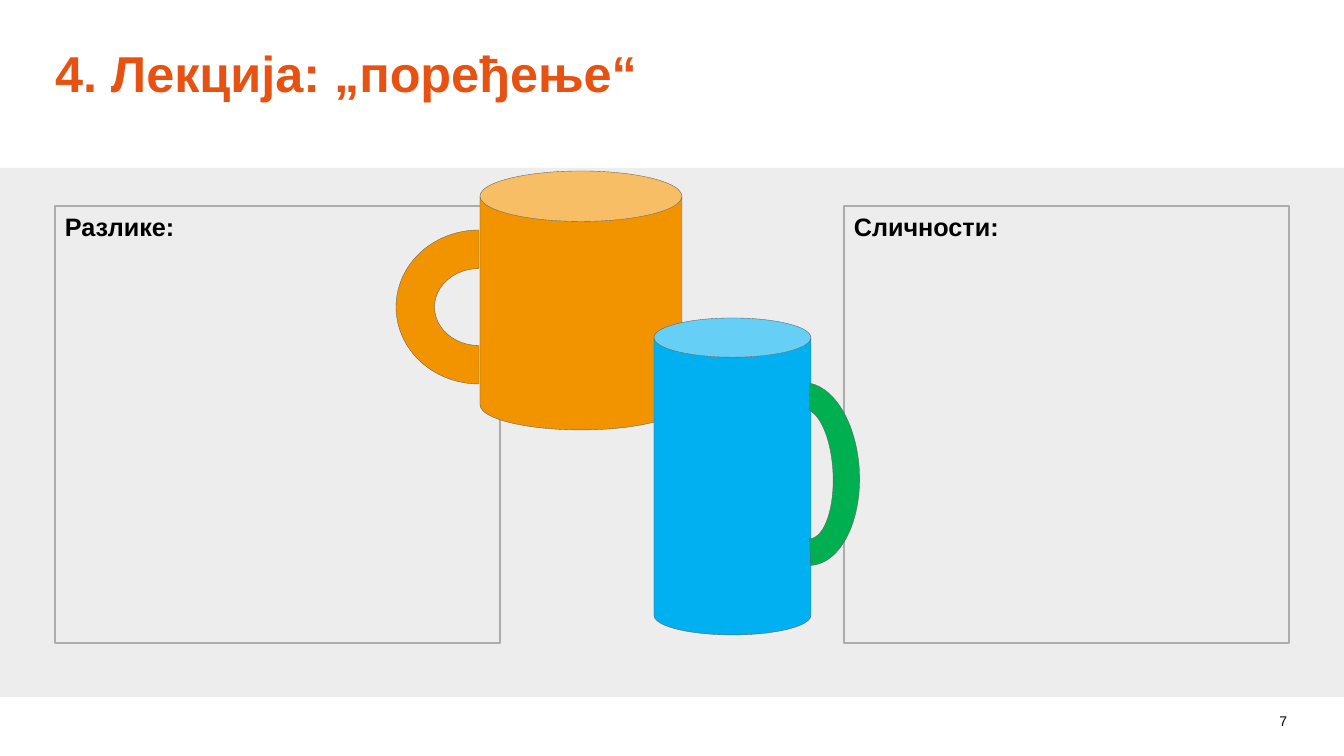
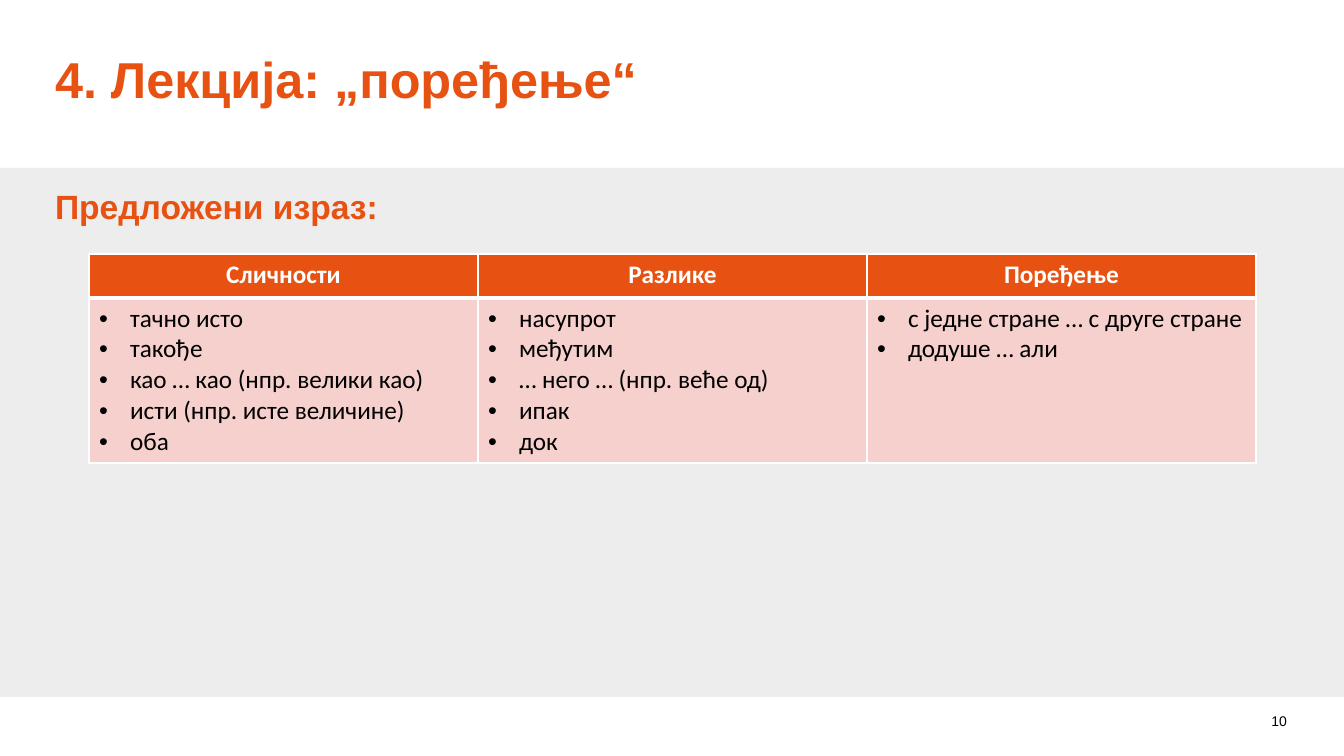
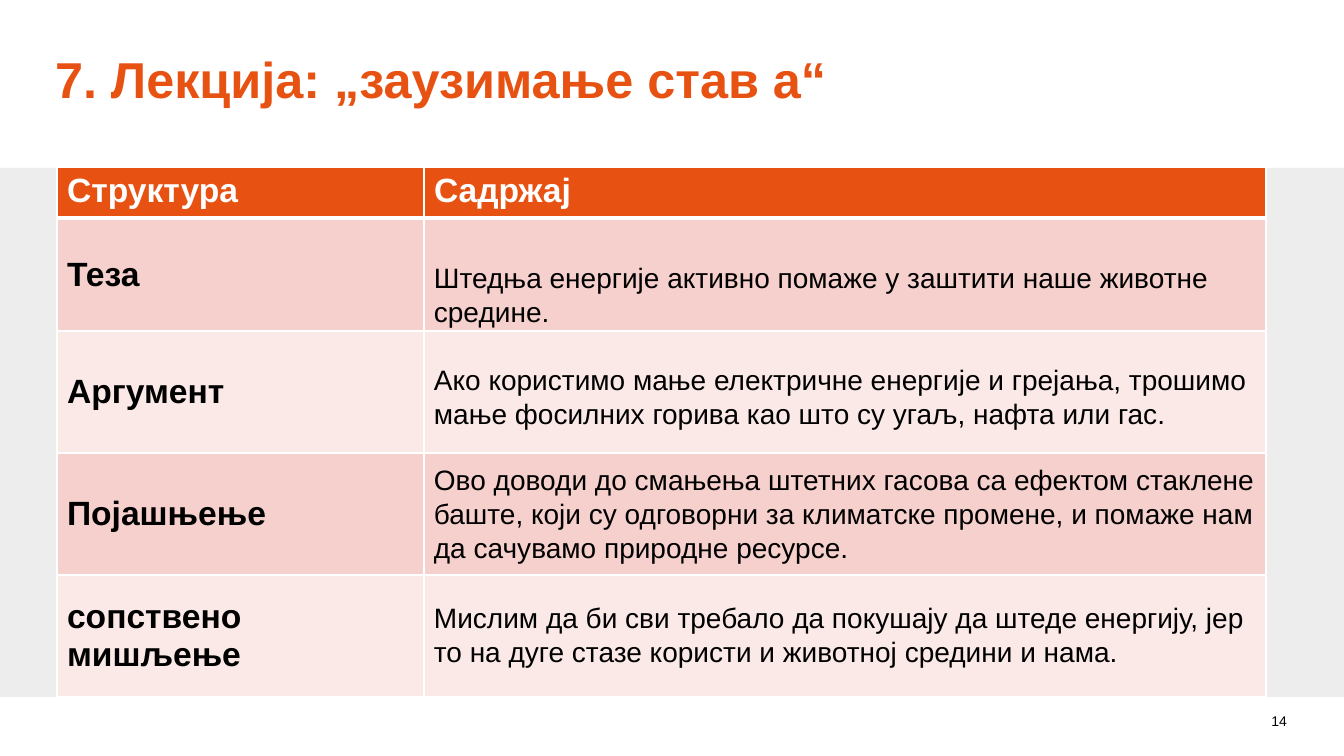
from dataclasses import dataclass

from lxml.etree import SubElement
from pptx import Presentation
from pptx.dml.color import RGBColor
from pptx.enum.shapes import MSO_SHAPE as SHAPE
from pptx.enum.text import MSO_ANCHOR as ANCHOR, MSO_AUTO_SIZE as AUTO, PP_ALIGN as ALIGN
from pptx.oxml.ns import qn
from pptx.util import Emu, Pt

SLIDE_W, SLIDE_H = 1344, 756
SCALE = 12192000 / SLIDE_W  # EMU in one px


@dataclass(frozen=True)
class Theme:
    accent: str = "E75112"
    black: str = "000000"
    white: str = "FFFFFF"
    band: str = "EDEDED"
    frame: str = "ACACAC"
    outline: str = "5F5F5F"
    row_dark: str = "F6D0CC"
    row_light: str = "FAE9E7"
    orange: str = "F29400"
    blue: str = "00B0F0"
    green: str = "00B050"
    font: str = "Arial"
    table_font: str = "Calibri"
    title: int = 36
    heading: int = 24
    body: int = 20
    label: int = 18
    page: int = 10


T = Theme()


def px(n):
    return Emu(round(n * SCALE))


def rgb(value):
    return RGBColor.from_string(value)


# Text
def put_text(tf, text, size=T.body, color=T.black, bold=False, font=T.font,
             align=ALIGN.LEFT, anchor=None, inset=None, bullet=False):
    """Write one paragraph per line of text."""
    tf.word_wrap = True
    if anchor is not None:
        tf.vertical_anchor = anchor
    if inset is not None:
        tf.margin_left = tf.margin_top = tf.margin_right = tf.margin_bottom = px(inset)
    for i, line in enumerate(text.split("\n")):
        p = tf.add_paragraph() if i else tf.paragraphs[0]
        p.alignment = align
        if bullet:
            add_bullet(p)
        r = p.add_run()
        r.text = line
        r.font.size, r.font.bold, r.font.name = Pt(size), bold, font
        r.font.color.rgb = rgb(color)


def add_bullet(p, indent=31):
    pPr = p._p.get_or_add_pPr()
    pPr.set("marL", str(px(indent)))
    pPr.set("indent", str(-px(indent)))
    SubElement(pPr, qn("a:buFont"), typeface=T.font)
    SubElement(pPr, qn("a:buChar"), char="•")


def add_text(slide, box, text, **fmt):
    sp = slide.shapes.add_textbox(*map(px, box))
    put_text(sp.text_frame, text, **fmt)


# Shapes
def add_shape(slide, kind, box, fill=None, line=None, width=0.25, rotation=0):
    sp = slide.shapes.add_shape(kind, *map(px, box))
    sp.shadow.inherit = False
    sp.rotation = rotation
    if fill:
        sp.fill.solid()
        sp.fill.fore_color.rgb = rgb(fill)
    else:
        sp.fill.background()
    if line:
        sp.line.color.rgb = rgb(line)
        sp.line.width = Pt(width)
    else:
        sp.line.fill.background()
    return sp


def add_frame(slide, left, label):
    sp = add_shape(slide, SHAPE.RECTANGLE, (left, 206, 445, 437), line=T.frame, width=1.5)
    put_text(sp.text_frame, label, size=T.label, bold=True, anchor=ANCHOR.TOP)


# Tables
def set_borders(cell, top=1, bottom=1):
    tcPr = cell._tc.get_or_add_tcPr()
    for i, (side, width) in enumerate(zip("LRTB", (1, 1, top, bottom))):
        ln = SubElement(tcPr, qn(f"a:ln{side}"), w=str(Pt(width)))
        fill = SubElement(ln, qn("a:solidFill"))
        SubElement(fill, qn("a:srgbClr"), val=T.white)
        tcPr.insert(i, ln)


def add_table(slide, left, top, cols, rows, fills):
    box = (left, top, sum(cols), sum(rows))
    table = slide.shapes.add_table(len(rows), len(cols), *map(px, box)).table
    for col, width in zip(table.columns, cols):
        col.width = px(width)
    for i, (row, height, fill) in enumerate(zip(table.rows, rows, fills)):
        row.height = px(height)
        for cell in row.cells:
            cell.fill.solid()
            cell.fill.fore_color.rgb = rgb(fill)
            set_borders(cell, top=3 if i == 1 else 1, bottom=3 if i == 0 else 1)
    return table


def put_cell(cell, text, anchor=ANCHOR.TOP, **fmt):
    cell.vertical_anchor = anchor
    put_text(cell.text_frame, text, **fmt)


# Shared slide parts
def add_band(layout, slide):
    """Draw the grey band and move it to the layout, behind everything."""
    band = add_shape(slide, SHAPE.RECTANGLE, (0, 168, SLIDE_W, 529), fill=T.band)
    band.element.nvSpPr.cNvPr.set("id", "20")
    layout.shapes.element.insert(2, band.element)


def new_slide(prs, title, page, top=48, width=789):
    slide = prs.slides.add_slide(prs.slide_layouts[5])
    sp = slide.shapes.title
    sp.left, sp.top, sp.width, sp.height = map(px, (55, top, width, 108))
    put_text(sp.text_frame, title, size=T.title, color=T.accent, bold=True,
             anchor=ANCHOR.TOP, inset=0)
    sp.text_frame.auto_size = AUTO.NONE
    add_text(slide, (1197, 701, 90, 40), page, size=T.page, align=ALIGN.RIGHT,
             anchor=ANCHOR.MIDDLE, inset=0)
    return slide


# Slides
def cups_slide(prs):
    slide = new_slide(prs, "4. Лекција: „поређење“", "7", top=42)
    add_band(prs.slide_layouts[5], slide)
    add_frame(slide, 55, "Разлике:")
    add_shape(slide, SHAPE.BLOCK_ARC, (402, 224, 154, 166), T.orange, T.outline, rotation=270)
    add_frame(slide, 844, "Сличности:")
    add_shape(slide, SHAPE.CAN, (480, 171, 202, 259), T.orange, T.outline)
    add_shape(slide, SHAPE.CAN, (654, 318, 157, 317), T.blue, T.outline)
    handle = add_shape(slide, SHAPE.BLOCK_ARC, (715, 421, 183, 106), T.green, T.outline,
                       rotation=87.3)
    handle.adjustments[0] = 110.97


def phrases_slide(prs):
    slide = new_slide(prs, "4. Лекција: „поређење“", "10")
    add_text(slide, (55, 186, 1254, 402), "Предложени израз:", size=T.heading,
             color=T.accent, bold=True, inset=0)
    phrases = {
        "Сличности": "тачно исто\nтакође\nкао … као (нпр. велики као)\n"
                     "исти (нпр. исте величине)\nоба",
        "Разлике": "насупрот\nмеђутим\n… него … (нпр. веће од)\nипак\nдок",
        "Поређење": "с једне стране … с друге стране\nдодуше … али",
    }
    table = add_table(slide, 89, 254, [389] * 3, [44, 165], [T.accent, T.row_dark])
    for col, (head, lines) in enumerate(phrases.items()):
        put_cell(table.cell(0, col), head, size=T.label, color=T.white, bold=True,
                 font=T.table_font, align=ALIGN.CENTER)
        put_cell(table.cell(1, col), lines, size=T.label, font=T.table_font, bullet=True)


def opinion_slide(prs):
    slide = new_slide(prs, "7. Лекција: „заузимање став а“", "14", width=1192)
    table = add_table(slide, 57, 167, [367, 842], [51, 113] + [122] * 3,
                      [T.accent] + [T.row_dark, T.row_light] * 2)
    for col, head in enumerate(("Структура", "Садржај")):
        put_cell(table.cell(0, col), head, size=T.heading, color=T.white, bold=True)
    parts = [
        ("Теза", 256, 78,
         "Штедња енергије активно помаже у заштити наше животне средине."),
        ("Аргумент", 358, 78,
         "Ако користимо мање електричне енергије и грејања, трошимо мање фосилних "
         "горива као што су угаљ, нафта или гас."),
        ("Појашњење", 458, 112,
         "Ово доводи до смањења штетних гасова са ефектом стаклене баште, који су "
         "одговорни за климатске промене, и помаже нам да сачувамо природне ресурсе."),
        ("сопствено мишљење", 596, 78,
         "Мислим да би сви требало да покушају да штеде енергију, јер то на дуге "
         "стазе користи и животној средини и нама."),
    ]
    for row, (name, top, height, text) in enumerate(parts, start=1):
        put_cell(table.cell(row, 0), name, size=T.heading, bold=True, anchor=ANCHOR.MIDDLE)
        add_text(slide, (424, top, 842, height), text)


def main():
    prs = Presentation()
    prs.slide_width, prs.slide_height = px(SLIDE_W), px(SLIDE_H)
    cups_slide(prs)
    phrases_slide(prs)
    opinion_slide(prs)
    prs.save("out.pptx")


if __name__ == "__main__":
    main()
